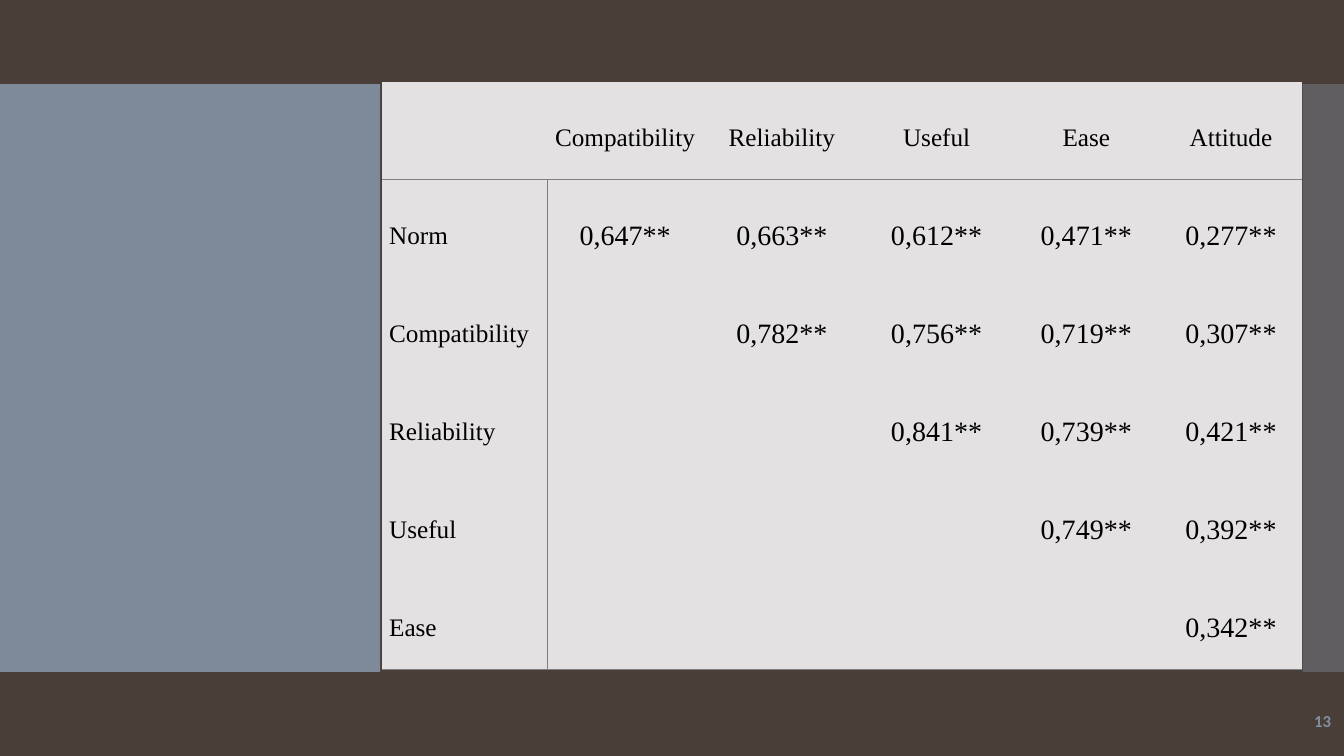
from lxml.etree import SubElement
from pptx import Presentation
from pptx.dml.color import RGBColor
from pptx.enum.shapes import MSO_SHAPE as SHAPE
from pptx.enum.text import MSO_ANCHOR as ANCHOR, PP_ALIGN as ALIGN
from pptx.oxml.ns import qn
from pptx.util import Inches, Pt

HEADERS = ["", "Compatibility", "Reliability", "Useful", "Ease", "Attitude"]
CORRELATIONS = [
    ("Norm", ["0,647**", "0,663**", "0,612**", "0,471**", "0,277**"]),
    ("Compatibility", ["0,782**", "0,756**", "0,719**", "0,307**"]),
    ("Reliability", ["0,841**", "0,739**", "0,421**"]),
    ("Useful", ["0,749**", "0,392**"]),
    ("Ease", ["0,342**"]),
]
PAGE = "13"
BROWN, SLATE, PALE, GREY, BLACK = "4A3F38", "818E9F", "E4E1E3", "7F7F7F", "000000"

WIDTH, HEIGHT = 13.33, 7.5
BAND_TOP, BAND_HEIGHT = HEIGHT / 9, HEIGHT * 7 / 9
PANELS = [(0, 3.77, 95), (12.92, 0.42, 40)]
TABLE_LEFT, TABLE_TOP, ROW_HEIGHT = 3.79, 0.81, BAND_HEIGHT / 6
COLUMNS = [1.64, 1.54, 1.57, 1.5, 1.47, 1.4]


def rgb(value):
    return RGBColor.from_string(value)


def add_run(p, text, size, font, color, bold=False):
    r = p.add_run()
    r.text = text
    r.font.size, r.font.name, r.font.bold = Pt(size), font, bold
    r.font.color.rgb = rgb(color)


def add_panel(s, left, width, opacity):
    sp = s.shapes.add_shape(SHAPE.RECTANGLE, Inches(left), Inches(BAND_TOP),
                            Inches(width), Inches(BAND_HEIGHT))
    sp.shadow.inherit = False
    sp.line.fill.background()
    sp.fill.solid()
    sp.fill.fore_color.rgb = rgb(SLATE)
    color = sp.fill._xPr.find(qn("a:solidFill"))[0]
    SubElement(color, qn("a:alpha"), val=str(opacity * 1000))


def add_borders(cell, sides):
    tcPr = cell._tc.get_or_add_tcPr()
    for side in "LRTB":
        if side in sides:
            ln = SubElement(tcPr, qn("a:ln" + side), w=str(Pt(1)))
            fill = SubElement(ln, qn("a:solidFill"))
            SubElement(fill, qn("a:srgbClr"), val=GREY)
        else:
            ln = SubElement(tcPr, qn("a:ln" + side), w="0")
            SubElement(ln, qn("a:noFill"))


def border_sides(row, col, last_row):
    sides = ""
    if row > 0 and col < 2:
        sides += "RL"[col]
    if row == 1:
        sides += "T"
    if row in (0, last_row):
        sides += "B"
    return sides


def fill_cell(cell, text, row, col, last_row):
    add_borders(cell, border_sides(row, col, last_row))
    cell.fill.solid()
    cell.fill.fore_color.rgb = rgb(PALE)
    cell.margin_left = cell.margin_right = Inches(0.07)
    cell.margin_top = cell.margin_bottom = 0
    cell.vertical_anchor = ANCHOR.MIDDLE
    if text:
        p = cell.text_frame.paragraphs[0]
        p.alignment = ALIGN.CENTER if col else ALIGN.LEFT
        p.line_spacing = 1.5
        p.space_before = p.space_after = Pt(6)
        add_run(p, text, 20 if row and col else 18, "Times New Roman", BLACK)


def add_correlations(s):
    blanks = len(HEADERS) - 1
    rows = [HEADERS] + [[name] + [""] * (blanks - len(values)) + values
                        for name, values in CORRELATIONS]
    table = s.shapes.add_table(len(rows), len(COLUMNS), Inches(TABLE_LEFT), Inches(TABLE_TOP),
                               Inches(sum(COLUMNS)), Inches(ROW_HEIGHT * len(rows))).table
    table.first_row = table.horz_banding = False
    for column, width in zip(table.columns, COLUMNS):
        column.width = Inches(width)
    for i, row in enumerate(rows):
        table.rows[i].height = Inches(ROW_HEIGHT)
        for j, text in enumerate(row):
            fill_cell(table.cell(i, j), text, i, j, len(rows) - 1)


def add_page_number(s):
    tf = s.shapes.add_textbox(Inches(11.63), Inches(6.95), Inches(1.67), Inches(0.4)).text_frame
    tf.word_wrap = True
    tf.vertical_anchor = ANCHOR.MIDDLE
    p = tf.paragraphs[0]
    p.alignment = ALIGN.RIGHT
    add_run(p, PAGE, 12, "Calibri", SLATE, bold=True)


def main():
    prs = Presentation()
    prs.slide_width, prs.slide_height = Inches(WIDTH), Inches(HEIGHT)
    s = prs.slides.add_slide(prs.slide_layouts[6])
    s.background.fill.solid()
    s.background.fill.fore_color.rgb = rgb(BROWN)
    for panel in PANELS:
        add_panel(s, *panel)
    add_correlations(s)
    add_page_number(s)
    prs.save("out.pptx")


if __name__ == "__main__":
    main()
